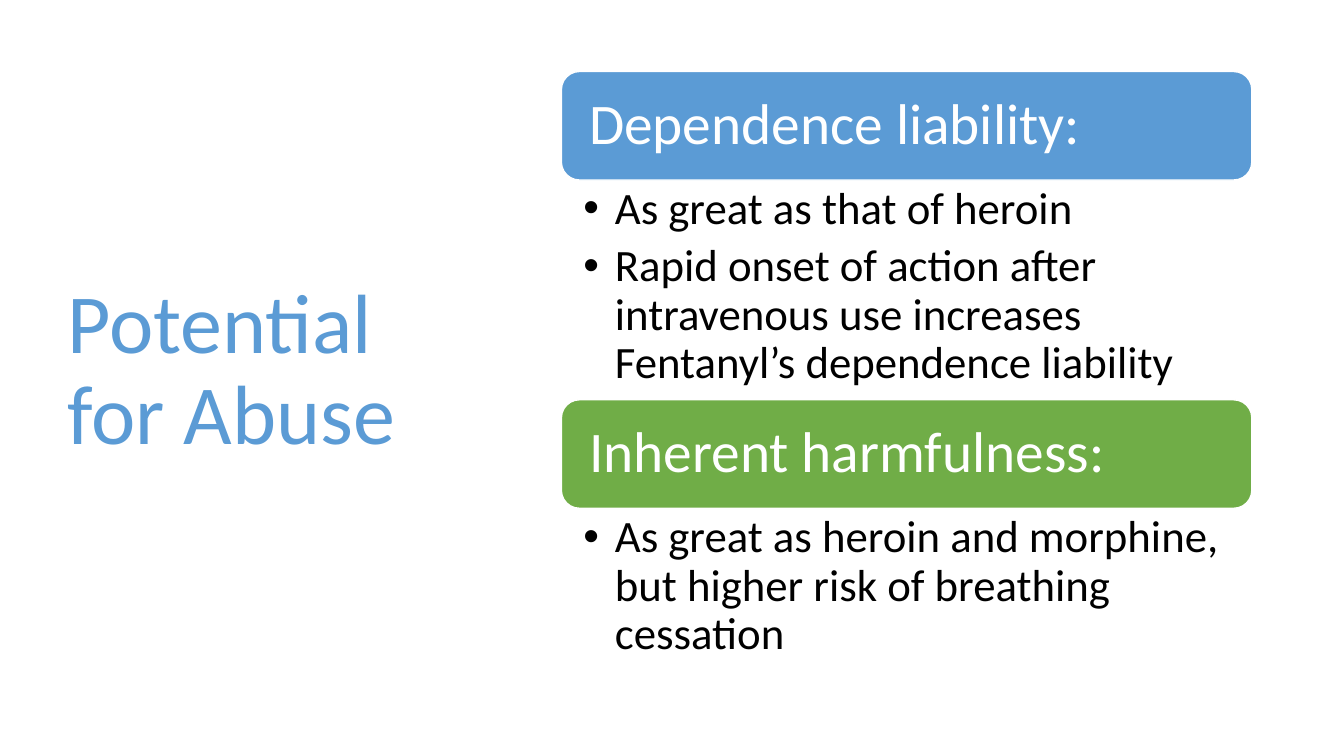
from dataclasses import dataclass

from lxml.etree import SubElement
from pptx import Presentation
from pptx.dml.color import RGBColor
from pptx.enum.shapes import MSO_SHAPE as Shape
from pptx.enum.text import MSO_ANCHOR as Anchor, PP_ALIGN as Align
from pptx.oxml.ns import qn
from pptx.util import Pt


@dataclass(frozen=True)
class Theme:
    font: str = "Calibri"
    blue: str = "5B9BD5"
    green: str = "70AD47"
    white: str = "FFFFFF"
    black: str = "000000"
    title_size: float = 60
    heading_size: float = 41
    body_size: float = 32


@dataclass(frozen=True)
class Box:
    left: float
    top: float
    width: float
    height: float

    def lengths(self) -> list[Pt]:
        return [Pt(v) for v in (self.left, self.top, self.width, self.height)]


@dataclass(frozen=True)
class Section:
    heading: str
    color: str
    points: tuple[str, ...]
    body_height: float


THEME = Theme()
TITLE_BOX = Box(41, 49, 299.5, 433.4)
COLUMN_LEFT, COLUMN_TOP, COLUMN_WIDTH = 401, 51.1, 493.2
HEADING_HEIGHT = 77.5
BULLET_INDENT = 22.5

SECTIONS = (
    Section(
        "Dependence liability:",
        THEME.blue,
        (
            "As great as that of heroin",
            "Rapid onset of action after intravenous use increases Fentanyl’s dependence liability",
        ),
        157,
    ),
    Section(
        "Inherent harmfulness:",
        THEME.green,
        ("As great as heroin and morphine, but higher risk of breathing cessation",),
        116.6,
    ),
)


def write_text(sp, texts: tuple[str, ...], size: float, color: str, frame: dict,
               space_after: float = 0, bulleted: bool = False) -> None:
    tf = sp.text_frame
    for name, value in {"word_wrap": True, **frame}.items():
        setattr(tf, name, value)
    for i, text in enumerate(texts):
        p = tf.paragraphs[0] if i == 0 else tf.add_paragraph()
        layout = {"alignment": Align.LEFT, "line_spacing": 0.9, "space_after": Pt(space_after)}
        for name, value in layout.items():
            setattr(p, name, value)
        if bulleted:
            add_bullet(p)
        r = p.add_run()
        r.text = text
        for name, value in {"name": THEME.font, "size": Pt(size)}.items():
            setattr(r.font, name, value)
        r.font.color.rgb = RGBColor.from_string(color)


def add_bullet(p) -> None:
    p.level = 1
    pPr = p._p.get_or_add_pPr()
    pPr.set("marL", str(Pt(BULLET_INDENT)))
    pPr.set("indent", str(-Pt(BULLET_INDENT)))
    SubElement(pPr, qn("a:buFont")).set("typeface", "Arial")
    SubElement(pPr, qn("a:buChar")).set("char", "•")


def draw_title(s) -> None:
    sp = s.shapes.add_textbox(*TITLE_BOX.lengths())
    write_text(sp, ("Potential for Abuse",), THEME.title_size, THEME.blue,
               {"vertical_anchor": Anchor.MIDDLE})


def draw_heading(s, section: Section, box: Box) -> None:
    sp = s.shapes.add_shape(Shape.ROUNDED_RECTANGLE, *box.lengths())
    sp.shadow.inherit = False
    sp.fill.solid()
    sp.fill.fore_color.rgb = RGBColor.from_string(section.color)
    sp.line.color.rgb = RGBColor.from_string(THEME.white)
    sp.line.width = Pt(1)
    write_text(sp, (section.heading,), THEME.heading_size, THEME.white,
               {"vertical_anchor": Anchor.MIDDLE, "margin_left": Pt(16), "margin_right": Pt(16)})


def draw_points(s, section: Section, box: Box) -> None:
    sp = s.shapes.add_textbox(*box.lengths())
    margins = {"margin_left": Pt(15.7), "margin_right": Pt(23),
               "margin_top": Pt(4.1), "margin_bottom": Pt(4.1)}
    write_text(sp, section.points, THEME.body_size, THEME.black, margins,
               space_after=6.4, bulleted=True)


def draw_sections(s) -> None:
    top = COLUMN_TOP
    for section in SECTIONS:
        draw_heading(s, section, Box(COLUMN_LEFT, top, COLUMN_WIDTH, HEADING_HEIGHT))
        top += HEADING_HEIGHT
        draw_points(s, section, Box(COLUMN_LEFT, top, COLUMN_WIDTH, section.body_height))
        top += section.body_height


def main() -> None:
    prs = Presentation()
    prs.slide_width, prs.slide_height = Pt(960), Pt(540)
    s = prs.slides.add_slide(prs.slide_layouts[6])
    draw_title(s)
    draw_sections(s)
    prs.save("out.pptx")


if __name__ == "__main__":
    main()
